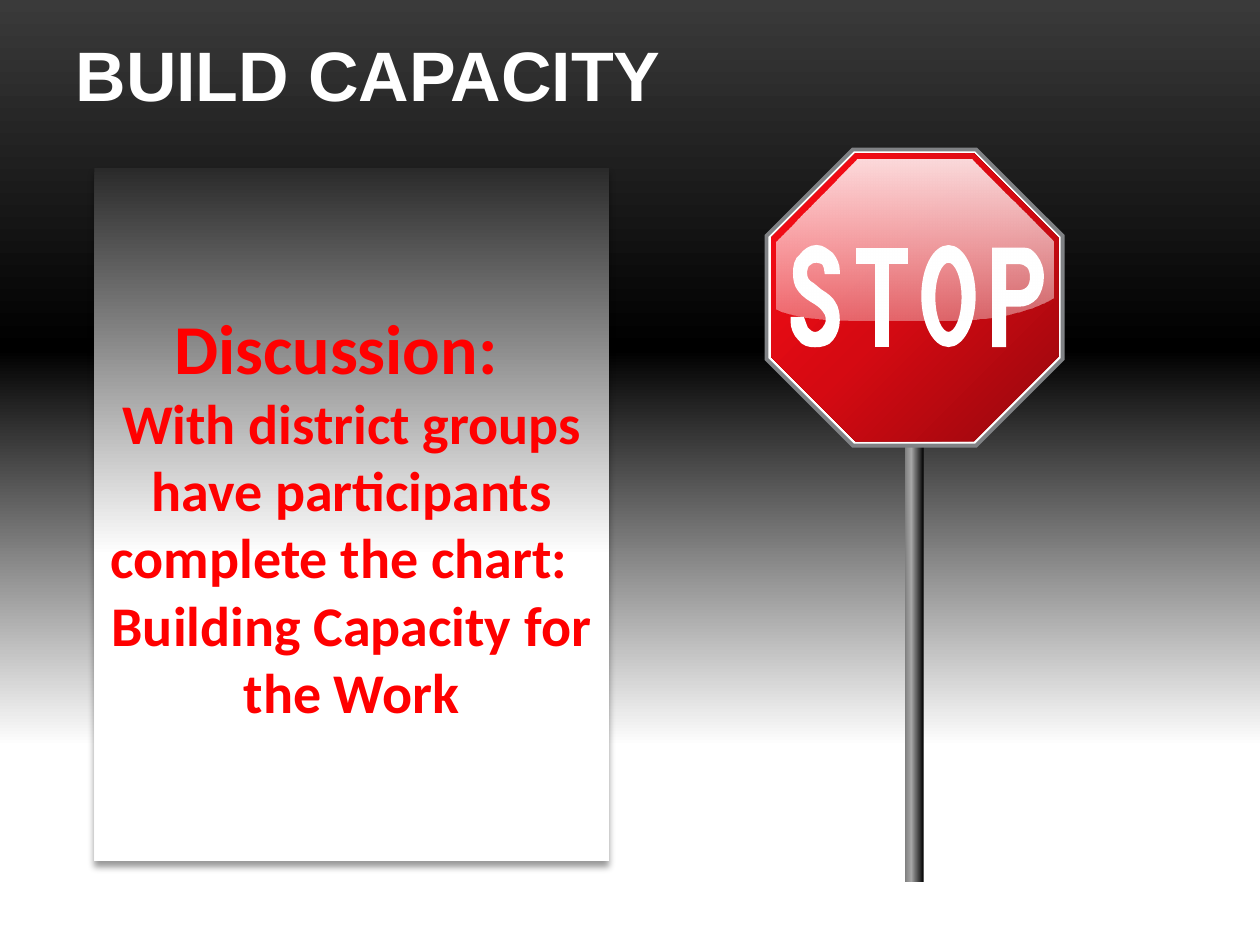
from dataclasses import dataclass

from lxml.etree import SubElement
from pptx import Presentation
from pptx.dml.color import RGBColor
from pptx.enum.shapes import MSO_SHAPE
from pptx.enum.text import MSO_ANCHOR, MSO_AUTO_SIZE, PP_ALIGN
from pptx.oxml.ns import qn
from pptx.util import Pt

COLORS = {
    "white": "FFFFFF", "black": "000000", "charcoal": "3A3A3A", "graphite": "2A2A2A",
    "rim": "808285", "steel": "808080", "silver": "A6A6A6", "text_red": "FF0000",
    "dark_red": "96070D", "sign_red": "D50A12", "bright_red": "FD0C16",
}
Contour = list[tuple[float, ...]]


@dataclass(frozen=True)
class Stop:
    percent: float
    color: str
    alpha: float = 100


@dataclass(frozen=True)
class Gradient:
    angle: float
    stops: tuple[Stop, ...]


@dataclass(frozen=True)
class Outline:
    contours: list[Contour]
    fill: str | Gradient
    line: str | None = None


def rgb(color: str) -> RGBColor:
    return RGBColor.from_string(COLORS[color])


def add_color(parent, color: str, alpha: float) -> None:
    tint = SubElement(parent, qn("a:srgbClr"), val=COLORS[color])
    if alpha < 100:
        SubElement(tint, qn("a:alpha"), val=str(int(alpha * 1000)))


def paint(fill, element, style: str | Gradient) -> None:
    if isinstance(style, str):
        fill.solid()
        fill.fore_color.rgb = rgb(style)
        return
    fill.gradient()
    fill.gradient_angle = (360 - style.angle) % 360
    stop_list = element.find(".//" + qn("a:gsLst"))
    for old_stop in list(stop_list):
        stop_list.remove(old_stop)
    for stop in style.stops:
        entry = SubElement(stop_list, qn("a:gs"), pos=str(int(stop.percent * 1000)))
        add_color(entry, stop.color, stop.alpha)


def finish(shape, fill: str | Gradient, line: str | None = None) -> None:
    shape.shadow.inherit = False
    paint(shape.fill, shape._element, fill)
    if line:
        shape.line.color.rgb = rgb(line)
        shape.line.width = Pt(2.25)
        SubElement(shape._element.spPr.find(qn("a:ln")), qn("a:miter"), lim="800000")
    else:
        shape.line.fill.background()


def add_rectangle(shapes, left: float, top: float, width: float, height: float, fill: Gradient):
    rectangle = shapes.add_shape(MSO_SHAPE.RECTANGLE, Pt(left), Pt(top), Pt(width), Pt(height))
    finish(rectangle, fill)
    return rectangle


def bend(freeform, contours: list[Contour]) -> None:
    steps = freeform._element.iter(qn("a:lnTo"))
    lines = iter(list(steps))
    for contour in contours:
        for segment in contour[1:]:
            first, *rest = [next(lines) for _ in range(len(segment) // 2)]
            if rest:
                first.tag = qn("a:cubicBezTo")
                for line in rest:
                    first.append(line[0])
                    line.getparent().remove(line)


def add_outline(shapes, outline: Outline) -> None:
    builder = None
    for contour in outline.contours:
        start, *points = [(Pt(x), Pt(y)) for segment in contour
                          for x, y in zip(segment[::2], segment[1::2])]
        if builder:
            builder.move_to(*start)
        else:
            builder = shapes.build_freeform(*start, scale=1.0)
        builder.add_line_segments(points, close=True)
    freeform = builder.convert_to_shape()
    bend(freeform, outline.contours)
    finish(freeform, outline.fill, outline.line)


def octagon(left: float, top: float, size: float, corner: float) -> Contour:
    near, far = corner, size - corner
    corners = [(near, size), (0, far), (0, near), (near, 0),
               (far, 0), (size, near), (size, far), (far, size)]
    return [(left + x, top + y) for x, y in corners]


def ellipse(x: float, y: float, rx: float, ry: float) -> Contour:
    kx, ky = 0.55 * rx, 0.55 * ry
    return [(x, y - ry),
            (x + kx, y - ry, x + rx, y - ky, x + rx, y),
            (x + rx, y + ky, x + kx, y + ry, x, y + ry),
            (x - kx, y + ry, x - rx, y + ky, x - rx, y),
            (x - rx, y - ky, x - kx, y - ry, x, y - ry)]


def write(paragraph, text: str, *, size: float, font: str, color: str, align=PP_ALIGN.LEFT) -> None:
    paragraph.alignment = align
    run = paragraph.add_run()
    run.text = text
    run.font.size = Pt(size)
    run.font.name = font
    run.font.bold = True
    run.font.color.rgb = rgb(color)


def letters() -> list[list[Contour]]:
    s = [
        (478.8, 155.5), (472.3, 155.5), (472.3, 153.4, 471.6, 151.9, 470.9, 150.5),
        (470.2, 149.8, 468, 149, 466.6, 149), (464.4, 149, 463, 149.8, 461.5, 151.2),
        (460.8, 151.9, 460.1, 154.1, 460.1, 156.2), (460.1, 159.1, 461.5, 161.3, 464.4, 162.7),
        (468.7, 166.3), (472.3, 168.5, 475.2, 170.6, 476.6, 173.5),
        (478.1, 175.7, 478.8, 179.3, 478.8, 182.9), (478.8, 187.2, 477.4, 190.8, 475.2, 193.7),
        (473, 196.6, 469.4, 197.3, 465.8, 197.3), (462.2, 197.3, 459.4, 196.6, 457.2, 193.7),
        (454.3, 190.8, 452.9, 187.2, 452.9, 183.6), (452.9, 182.2), (458.6, 182.2),
        (459.4, 184.3, 460.1, 186.5, 460.8, 187.9), (462.2, 189.4, 463.7, 190.8, 465.8, 190.8),
        (468, 190.8, 469.4, 189.4, 470.9, 187.9), (472.3, 186.5, 473, 184.3, 473, 182.9),
        (473, 180, 472.3, 178.6, 470.9, 177.1), (469.4, 175, 467.3, 173.5, 463.7, 171.4),
        (460.1, 169.2, 457.9, 167, 456.5, 164.9), (455, 162.7, 454.3, 159.8, 454.3, 156.2),
        (454.3, 151.9, 455, 148.3, 457.9, 146.2), (460.1, 143.3, 463, 141.1, 466.6, 141.1),
        (470.2, 141.1, 472.3, 143.3, 475.2, 145.4), (477.4, 148.3, 478.8, 151.2, 478.8, 154.8)]
    t = [(506.9, 149.8), (506.9, 197.3), (501.1, 197.3), (501.1, 149.8),
         (490.3, 149.8), (490.3, 142.6), (517.7, 142.6), (517.7, 149.8)]
    p_outer = [
        (573.8, 174.2), (573.8, 197.3), (568.1, 197.3), (568.1, 142.6), (581.8, 142.6),
        (584.6, 142.6, 586.8, 142.6, 588.2, 143.3), (589, 144, 590.4, 144.7, 591.8, 146.9),
        (594, 149.8, 595.4, 153.4, 595.4, 158.4), (595.4, 162.7, 594, 167, 591.8, 169.9),
        (589, 172.8, 586.1, 174.2, 581.8, 174.2)]
    p_inner = [
        (573.8, 167), (581.8, 167), (583.9, 167, 586.1, 166.3, 587.5, 164.9),
        (589, 163.4, 589.7, 161.3, 589.7, 158.4), (589.7, 152.6, 586.8, 149.8, 581.8, 149.8),
        (573.8, 149.8)]
    o = [ellipse(542, 169.2, 14.4, 28), ellipse(542, 169.9, 8.6, 20.9)]
    return [[s], [t], o, [p_outer, p_inner]]


def add_stop_sign(slide) -> None:
    sign = slide.shapes.add_group_shape().shapes
    add_rectangle(sign, 517, 223.2, 10.8, 280.8, Gradient(
        180, (Stop(0, "black"), Stop(65, "silver"), Stop(100, "steel"))))
    face = Gradient(225, (Stop(0, "dark_red"), Stop(50, "sign_red"), Stop(100, "bright_red")))
    gloss = Gradient(270, (Stop(0, "white", 37), Stop(100, "white", 85)))
    shine = [(524.2, 182.9), (565.9, 184.3, 587.5, 178.6, 601.9, 169.9), (601.9, 138.2),
             (555.1, 91.4), (489.6, 91.4), (443.5, 138.2), (443.5, 176.4),
             (464.4, 185.8, 505.4, 182.2, 524.2, 182.9)]
    add_outline(sign, Outline([octagon(438, 85.4, 169.2, 49.4)], "white", "rim"))
    add_outline(sign, Outline([octagon(440.6, 87.8, 164.2, 48.2)], face))
    for contours in letters():
        add_outline(sign, Outline(contours, "white", "white"))
    add_outline(sign, Outline([shine], gloss))


def add_discussion(slide) -> None:
    panel = add_rectangle(slide.shapes, 54, 96, 294, 396, Gradient(
        90, (Stop(0, "graphite"), Stop(56, "white"))))
    effects = panel._element.spPr.find(qn("a:effectLst"))
    shadow = SubElement(effects, qn("a:outerShdw"), blurRad=str(Pt(4)), dist=str(Pt(3)),
                        dir="5400000", rotWithShape="0")
    add_color(shadow, "black", 40)
    frame = panel.text_frame
    frame.word_wrap = True
    frame.vertical_anchor = MSO_ANCHOR.MIDDLE
    lines = (("Discussion:  ", 40),
             ("With district groups have participants complete the chart:   ", 32),
             ("Building Capacity for the Work", 32))
    for index, (text, size) in enumerate(lines):
        paragraph = frame.add_paragraph() if index else frame.paragraphs[0]
        write(paragraph, text, size=size, font="Calibri", color="text_red", align=PP_ALIGN.CENTER)


def add_title(slide) -> None:
    title = slide.shapes.title
    title.left, title.top, title.width, title.height = Pt(36), Pt(18), Pt(444), Pt(48)
    geometry = SubElement(title._element.spPr, qn("a:prstGeom"), prst="roundRect")
    SubElement(SubElement(geometry, qn("a:avLst")), qn("a:gd"), name="adj", fmla="val 0")
    frame = title.text_frame
    frame.word_wrap = False
    frame.auto_size = MSO_AUTO_SIZE.NONE
    frame.vertical_anchor = MSO_ANCHOR.MIDDLE
    write(frame.paragraphs[0], "BUILD CAPACITY", size=40, font="Arial", color="white")


def main() -> None:
    deck = Presentation()
    deck.slide_width, deck.slide_height = Pt(720), Pt(540)
    slide = deck.slides.add_slide(deck.slide_layouts[5])
    paint(slide.background.fill, slide._element, Gradient(
        90, (Stop(0, "charcoal"), Stop(37, "black"), Stop(79, "white"))))
    add_title(slide)
    add_stop_sign(slide)
    add_discussion(slide)
    deck.save("out.pptx")


if __name__ == "__main__":
    main()
